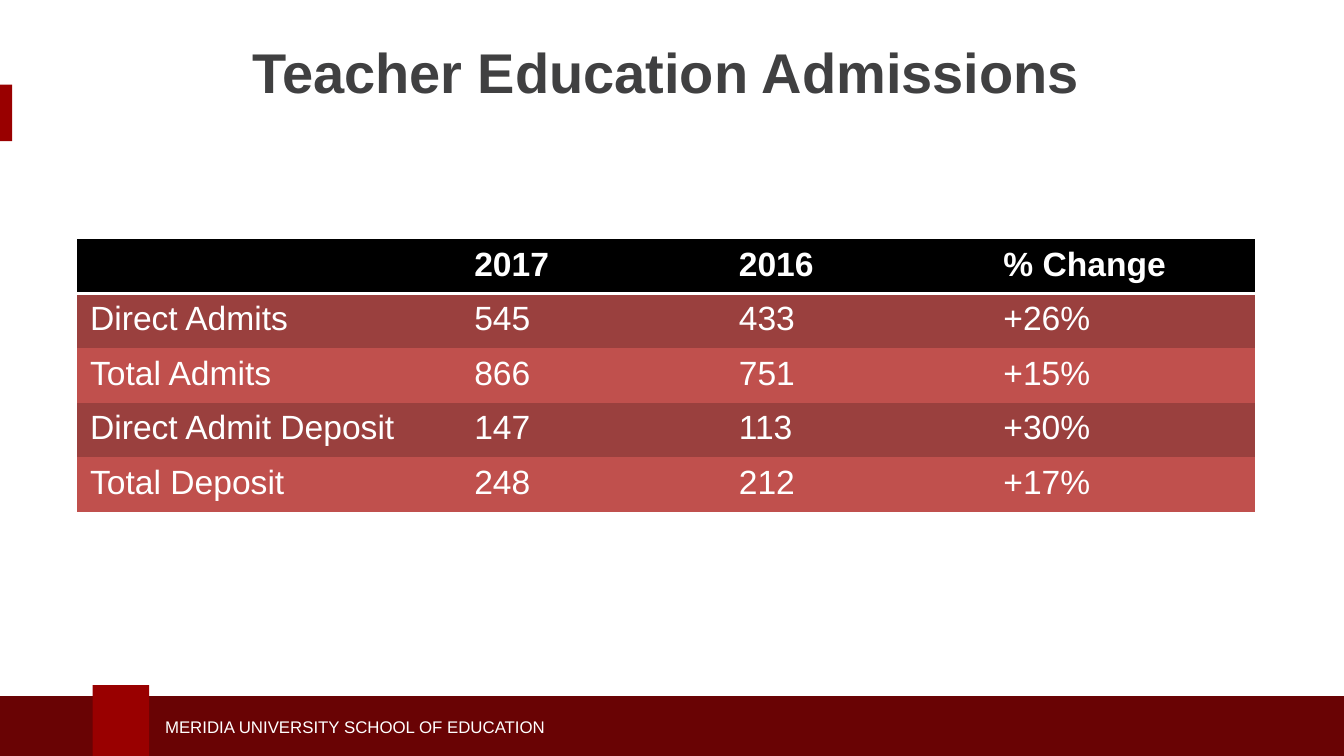
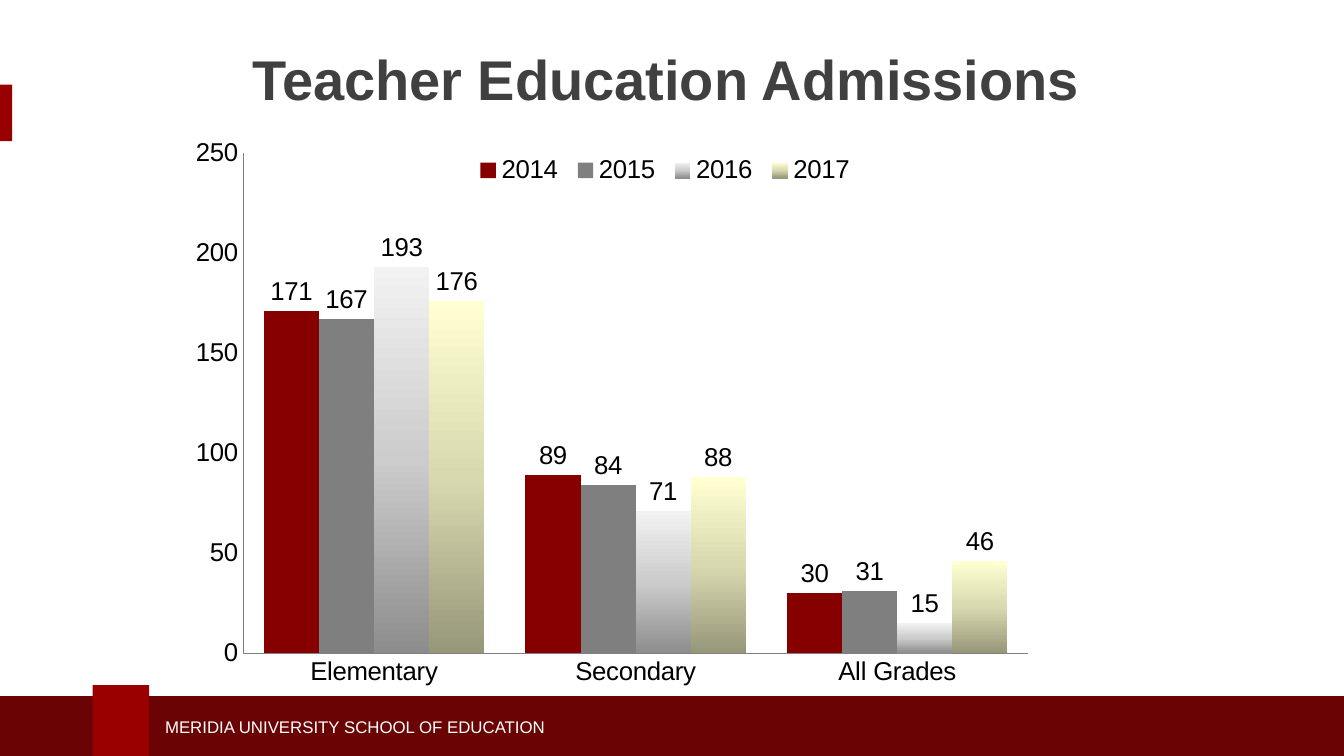
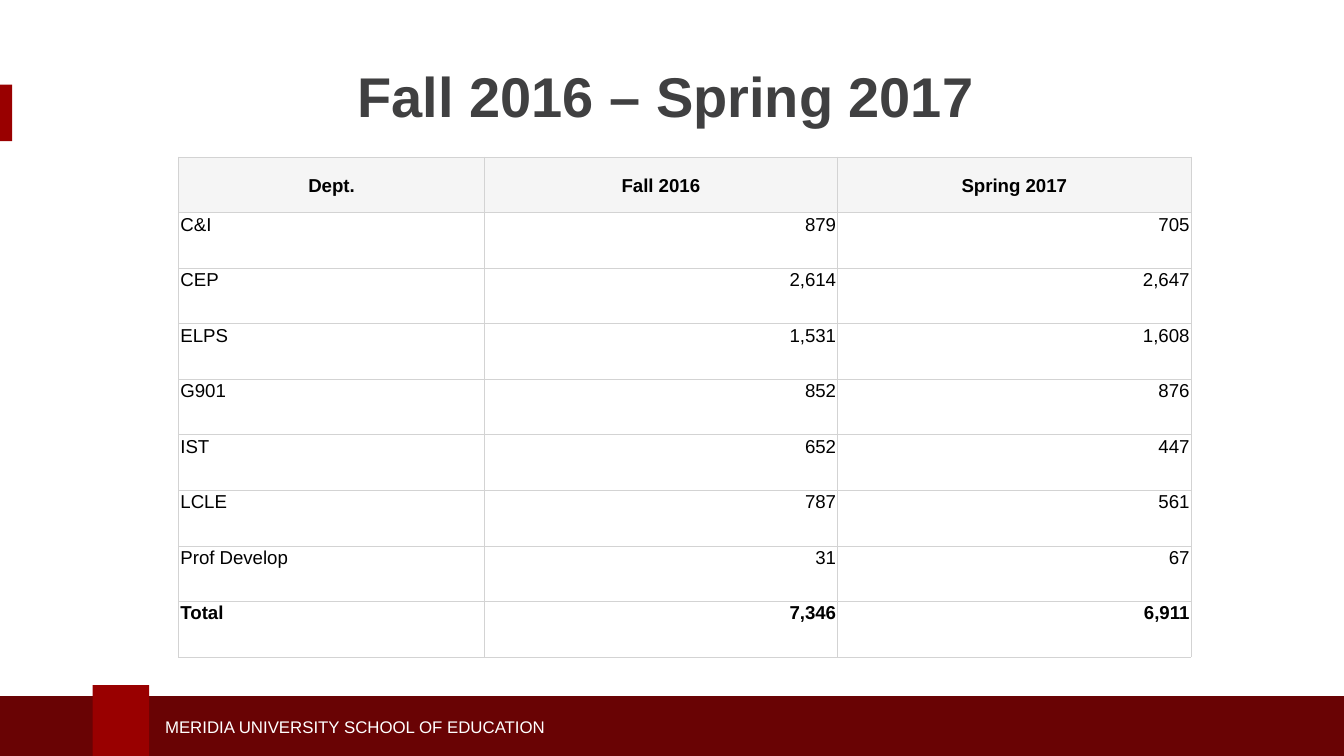
from pptx import Presentation
from pptx.chart.data import CategoryChartData
from pptx.dml.color import RGBColor
from pptx.enum.chart import XL_CHART_TYPE, XL_LABEL_POSITION, XL_LEGEND_POSITION, XL_TICK_MARK
from pptx.enum.shapes import MSO_SHAPE
from pptx.enum.text import MSO_ANCHOR, PP_ALIGN
from pptx.oxml import parse_xml
from pptx.oxml.ns import nsdecls, qn
from pptx.util import Cm, Pt

RECT = MSO_SHAPE.RECTANGLE
MIDDLE, TOP = MSO_ANCHOR.MIDDLE, MSO_ANCHOR.TOP
LEFT, CENTER, RIGHT = PP_ALIGN.LEFT, PP_ALIGN.CENTER, PP_ALIGN.RIGHT
COLUMNS = XL_CHART_TYPE.COLUMN_CLUSTERED
OUTSIDE = XL_LABEL_POSITION.OUTSIDE_END
LEGEND_TOP = XL_LEGEND_POSITION.TOP
NO_TICK = XL_TICK_MARK.NONE
PLAIN_TABLE = "{2D5ABB26-0587-4C30-8999-92F81FD0307C}"


class Theme:
    font = "Arial"
    white, black, title = "FFFFFF", "000000", "404041"
    crimson, maroon = "990000", "690304"
    row_dark, row_light = "9A403E", "C0504D"
    head_gray, grid, axis = "F5F5F5", "D3D3D3", "808080"
    series = [["860000"], ["7F7F7F"], ["F2F2F2", "CCCCCC", "8D8D8D"], ["FFFFD2", "D9D9B0", "97977A"]]
    title_pt, admissions_pt, chart_pt, dept_pt, footer_pt = 30, 18, 13.8, 10, 9


def put_text(tf, text, size, color, bold=False, align=LEFT):
    p = tf.paragraphs[0]
    p.alignment = align
    r = p.add_run()
    r.text = text
    r.font.name = Theme.font
    r.font.size = Pt(size)
    r.font.bold = bold
    r.font.color.rgb = RGBColor.from_string(color)


def set_borders(cell, sides, color, width):
    tcPr = cell._tc.get_or_add_tcPr()
    for i, side in enumerate(sides):
        tcPr.insert(i, parse_xml(
            f'<a:ln{side} {nsdecls("a")} w="{Pt(width)}"><a:solidFill>'
            f'<a:srgbClr val="{color}"/></a:solidFill></a:ln{side}>'))


prs = Presentation()
prs.slide_width, prs.slide_height = Cm(25.4), Cm(14.29)

titles = [("Teacher Education Admissions", 0.38),
          ("Teacher Education Admissions", 0.51),
          ("Fall 2016 – Spring 2017", 0.84)]
bars = [(0, 1.6, 0.23, 1.07, Theme.crimson),
        (-0.08, 13.16, 25.63, 1.27, Theme.maroon),
        (1.75, 12.95, 1.07, 1.47, Theme.crimson)]

for title, title_top in titles:
    s = prs.slides.add_slide(prs.slide_layouts[6])
    for x, y, w, h, color in bars:
        sp = s.shapes.add_shape(RECT, Cm(x), Cm(y), Cm(w), Cm(h))
        sp.shadow.inherit = False
        sp.fill.solid()
        sp.fill.fore_color.rgb = RGBColor.from_string(color)
        sp.line.fill.background()
    labels = [
        (2.87, 13.41, 10.03, 0.64, "MERIDIA UNIVERSITY SCHOOL OF EDUCATION",
         dict(size=Theme.footer_pt, color=Theme.white)),
        (1.47, title_top, 22.23, 1.93, title,
         dict(size=Theme.title_pt, color=Theme.title, bold=True, align=CENTER)),
    ]
    for x, y, w, h, text, style in labels:
        tf = s.shapes.add_textbox(Cm(x), Cm(y), Cm(w), Cm(h)).text_frame
        tf.word_wrap = True
        tf.vertical_anchor = MIDDLE
        put_text(tf, text, **style)

admissions_slide, chart_slide, dept_slide = prs.slides

admissions = [
    ("", "2017", "2016", "% Change"),
    ("Direct Admits", "545", "433", "+26%"),
    ("Total Admits", "866", "751", "+15%"),
    ("Direct Admit Deposit", "147", "113", "+30%"),
    ("Total Deposit", "248", "212", "+17%"),
]
departments = [
    ("Dept.", "Fall 2016", "Spring 2017"),
    ("C&I", "879", "705"),
    ("CEP", "2,614", "2,647"),
    ("ELPS", "1,531", "1,608"),
    ("G901", "852", "876"),
    ("IST", "652", "447"),
    ("LCLE", "787", "561"),
    ("Prof Develop", "31", "67"),
    ("Total", "7,346", "6,911"),
]
tables = [(admissions_slide, admissions, 1.45, 4.52, [7.26, 5, 5, 5], 1.03),
          (dept_slide, departments, 3.38, 2.97, [5.77, 6.68, 6.68], 1.05)]

for s, rows, x, y, widths, row_height in tables:
    table = s.shapes.add_table(len(rows), len(widths), Cm(x), Cm(y), Cm(sum(widths)),
                               Cm(row_height * len(rows))).table
    table._tbl.tblPr.find(qn("a:tableStyleId")).text = PLAIN_TABLE
    table.first_row = table.horz_banding = False
    for column, width in zip(table.columns, widths):
        column.width = Cm(width)
    for i, row in enumerate(rows):
        table.rows[i].height = Cm(row_height)
        head = i == 0
        for j, text in enumerate(row):
            cell = table.cell(i, j)
            if rows is admissions:
                fill = Theme.black if head else (Theme.row_light, Theme.row_dark)[i % 2]
                style = dict(size=Theme.admissions_pt, color=Theme.white, bold=head)
                if head:
                    set_borders(cell, "B", Theme.white, 2)
            else:
                fill = Theme.head_gray if head else None
                style = dict(size=Theme.dept_pt, color=Theme.black, bold=head or row[0] == "Total",
                             align=CENTER if head else RIGHT if j else LEFT)
                cell.margin_left = cell.margin_right = cell.margin_top = Cm(0.03)
                cell.margin_bottom = 0
                cell.vertical_anchor = MIDDLE if head else TOP
                set_borders(cell, "LRTB", Theme.grid, 0.5)
            if fill:
                cell.fill.solid()
                cell.fill.fore_color.rgb = RGBColor.from_string(fill)
            else:
                cell.fill.background()
            if text:
                put_text(cell.text_frame, text, **style)

data = CategoryChartData()
data.categories = ["Elementary", "Secondary", "All Grades"]
data.add_series("2014", (171, 89, 30))
data.add_series("2015", (167, 84, 31))
data.add_series("2016", (193, 71, 15))
data.add_series("2017", (176, 88, 46))
chart = chart_slide.shapes.add_chart(COLUMNS, Cm(3.3), Cm(2.36), Cm(18.54), Cm(10.74), data).chart
chart.has_title = False
chart.font.name = Theme.font
chart.font.size = Pt(Theme.chart_pt)
chart.font.color.rgb = RGBColor.from_string(Theme.black)
chart._chartSpace.find(qn("c:chart")).addnext(parse_xml(
    f'<c:spPr {nsdecls("c", "a")}><a:solidFill><a:srgbClr val="{Theme.white}"/></a:solidFill>'
    '<a:ln><a:noFill/></a:ln></c:spPr>'))

chart.has_legend = True
chart.legend.position = LEGEND_TOP
chart.legend.include_in_layout = False
plot_area = chart._chartSpace.chart.plotArea
legend = chart.legend._element
layouts = [(plot_area, 0, '<c:layoutTarget val="inner"/>', (0.07, 0.05, 0.8, 0.88)),
           (legend, 1, "", (0.3, 0.05, 0.4, 0.06))]
for parent, index, target, (x, y, w, h) in layouts:
    for old in parent.findall(qn("c:layout")):
        parent.remove(old)
    parent.insert(index, parse_xml(
        f'<c:layout {nsdecls("c")}><c:manualLayout>{target}'
        '<c:xMode val="edge"/><c:yMode val="edge"/>'
        f'<c:x val="{x}"/><c:y val="{y}"/><c:w val="{w}"/><c:h val="{h}"/>'
        '</c:manualLayout></c:layout>'))

for axis in (chart.category_axis, chart.value_axis):
    axis.major_tick_mark = axis.minor_tick_mark = NO_TICK
    axis.has_major_gridlines = False
    axis.format.line.width = Pt(0.19)
    axis.format.line.color.rgb = RGBColor.from_string(Theme.axis)
chart.value_axis.minimum_scale = 0
chart.value_axis.maximum_scale = 250
chart.value_axis.major_unit = 50

plot = chart.plots[0]
plot.gap_width = 75
plot.overlap = 0
plot.vary_by_categories = False
plot.has_data_labels = True
plot.data_labels.show_value = True
plot.data_labels.position = OUTSIDE
for series, colors in zip(plot.series, Theme.series):
    if len(colors) == 1:
        series.format.fill.solid()
        series.format.fill.fore_color.rgb = RGBColor.from_string(colors[0])
    else:
        stops = "".join(f'<a:gs pos="{i * 50000}"><a:srgbClr val="{color}"/></a:gs>'
                        for i, color in enumerate(colors))
        series._element.get_or_add_spPr().append(parse_xml(
            f'<a:gradFill {nsdecls("a")}><a:gsLst>{stops}</a:gsLst>'
            '<a:lin ang="5400000" scaled="0"/></a:gradFill>'))

prs.save("out.pptx")
